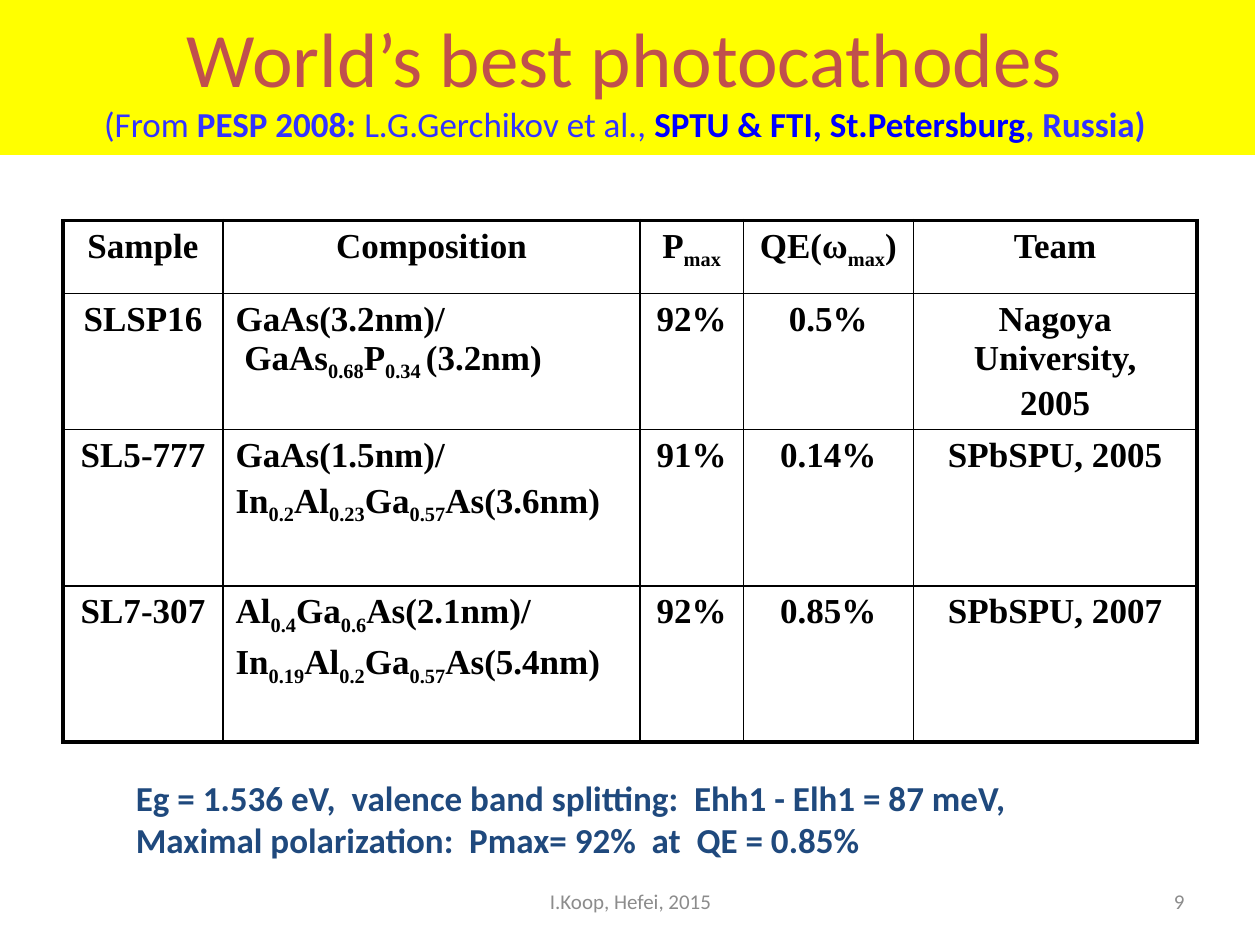
from lxml.etree import SubElement
from pptx import Presentation
from pptx.dml.color import RGBColor
from pptx.enum.text import MSO_ANCHOR, MSO_AUTO_SIZE, PP_ALIGN
from pptx.oxml.ns import qn
from pptx.util import Inches, Pt

THEME = {
    "sans": "Calibri", "serif": "Times New Roman",
    "title": 44, "body": 20, "small": 12,
    "band": "FFFF00", "red": "C0504D", "violet": "3333FF", "blue": "0000FF",
    "navy": "1F497D", "grey": "8C8C8C", "black": "000000",
    "outer": 2.25, "inner": 1,
}

TITLE = "World’s best photocathodes"
SOURCE = [  # text, colour, bold
    ("(From ", "violet", False),
    ("PESP 2008: ", "violet", True),
    ("L.G.Gerchikov et al., ", "violet", False),
    ("SPTU & FTI, St.Petersburg", "blue", True),
    (", Russia)", "violet", True),
]
# Square brackets mark subscripts, a newline starts a paragraph
ROWS = [
    ("Sample", "Composition", "P[max]", "QE(ω[max])", "Team"),
    ("SLSP16", "GaAs(3.2nm)/\n GaAs[0.68]P[0.34 ](3.2nm)", "92%", "0.5%",
     "Nagoya University,\n2005"),
    ("SL5-777", "GaAs(1.5nm)/\nIn[0.2]Al[0.23]Ga[0.57]As(3.6nm)", "91%", "0.14%",
     "SPbSPU, 2005"),
    ("SL7-307", "Al[0.4]Ga[0.6]As(2.1nm)/\nIn[0.19]Al[0.2]Ga[0.57]As(5.4nm)", "92%",
     "0.85%", "SPbSPU, 2007"),
]
COL_WIDTHS = (1.27, 3.31, 0.82, 1.35, 2.25)
ROW_HEIGHTS = (0.58, 1.08, 1.24, 1.24)
COMPOSITION = 1
NOTES = ("Eg = 1.536 eV,  valence band splitting:  Ehh1 - Elh1 = 87 meV,\n"
         "Maximal polarization:  Pmax= 92%  at  QE = 0.85%")
FOOTER, PAGE = "I.Koop, Hefei, 2015", "9"


def style(r, size, color, font="sans", bold=False):
    r.font.name = THEME[font]
    r.font.size = Pt(THEME[size])
    r.font.bold = bold
    r.font.color.rgb = RGBColor.from_string(THEME[color])


def add_title(s):
    sp = s.shapes.title
    sp.left, sp.top, sp.width, sp.height = map(Inches, (-0.04, 0, 10, 1.23))
    sp.fill.solid()
    sp.fill.fore_color.rgb = RGBColor.from_string(THEME["band"])
    tf = sp.text_frame
    tf.auto_size = MSO_AUTO_SIZE.NONE
    tf.vertical_anchor = MSO_ANCHOR.MIDDLE
    p = tf.paragraphs[0]
    p.text = TITLE
    p.alignment = PP_ALIGN.CENTER
    style(p.runs[0], "title", "red")
    p.add_line_break()
    for text, color, bold in SOURCE:
        r = p.add_run()
        r.text = text
        style(r, "body", color, bold=bold)


def add_text(s, box, text, size, color, align=PP_ALIGN.LEFT,
             anchor=MSO_ANCHOR.MIDDLE, bold=False):
    tf = s.shapes.add_textbox(*map(Inches, box)).text_frame
    tf.word_wrap = True
    tf.vertical_anchor = anchor
    tf.text = text
    for p in tf.paragraphs:
        p.alignment = align
        for r in p.runs:
            style(r, size, color, bold=bold)


def fill_cell(cell, text, align):
    cell.text = text
    for i, (p, line) in enumerate(zip(cell.text_frame.paragraphs, text.split("\n"))):
        p.text = ""
        p.alignment = align
        if i and not line.startswith(" "):
            p.space_before = Pt(4)
        for n, part in enumerate(line.replace("]", "[").split("[")):
            if part:
                r = p.add_run()
                r.text = part
                style(r, "body", "black", "serif", True)
                if n % 2:
                    r.font._element.set("baseline", "-25000")


def set_borders(cell, outer):
    """Draw the four cell borders; outer tells which sides lie on the table edge."""
    tcPr = cell._tc.get_or_add_tcPr()
    for i, (side, edge) in enumerate(outer.items()):
        width = Pt(THEME["outer" if edge else "inner"])
        ln = SubElement(tcPr, qn(f"a:ln{side}"), w=str(width))
        SubElement(SubElement(ln, qn("a:solidFill")), qn("a:srgbClr"), val=THEME["black"])
        tcPr.insert(i, ln)


def add_samples(s):
    frame = s.shapes.add_table(len(ROWS), len(COL_WIDTHS), Inches(0.5), Inches(1.75),
                               Inches(sum(COL_WIDTHS)), Inches(sum(ROW_HEIGHTS)))
    table = frame.table
    table.first_row = table.horz_banding = False
    for col, width in zip(table.columns, COL_WIDTHS):
        col.width = Inches(width)
    for row, height in zip(table.rows, ROW_HEIGHTS):
        row.height = Inches(height)
    for i, texts in enumerate(ROWS):
        for j, text in enumerate(texts):
            cell = table.cell(i, j)
            left = i and j == COMPOSITION
            fill_cell(cell, text, PP_ALIGN.LEFT if left else PP_ALIGN.CENTER)
            cell.fill.background()
            set_borders(cell, {"L": j == 0, "R": j == len(texts) - 1,
                               "T": i == 0, "B": i == len(ROWS) - 1})


def main():
    prs = Presentation()
    prs.slide_width, prs.slide_height = Inches(10), Inches(7.5)
    s = prs.slides.add_slide(prs.slide_layouts[5])
    add_title(s)
    add_samples(s)
    add_text(s, (0.98, 6.11, 7.3, 0.77), NOTES, "body", "navy",
             anchor=MSO_ANCHOR.TOP, bold=True)
    add_text(s, (3.42, 6.95, 3.17, 0.4), FOOTER, "small", "grey", PP_ALIGN.CENTER)
    add_text(s, (7.17, 6.95, 2.33, 0.4), PAGE, "small", "grey", PP_ALIGN.RIGHT)
    prs.save("out.pptx")


if __name__ == "__main__":
    main()
